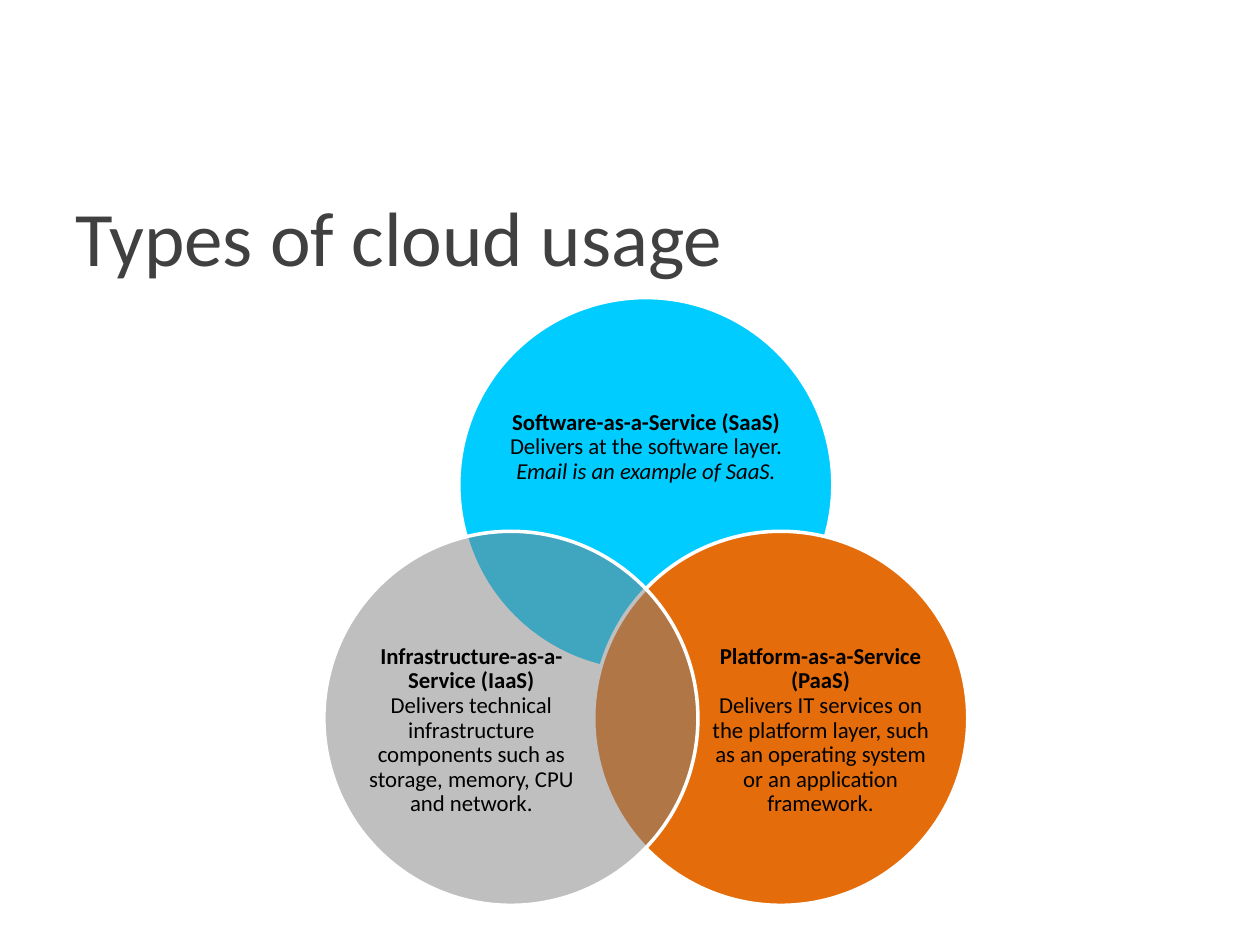
from math import sqrt

from lxml import etree
from pptx import Presentation
from pptx.dml.color import RGBColor
from pptx.enum.shapes import MSO_SHAPE
from pptx.enum.text import MSO_ANCHOR, PP_ALIGN
from pptx.oxml.ns import qn
from pptx.util import Cm, Pt

OVAL = MSO_SHAPE.OVAL
MIDDLE = MSO_ANCHOR.MIDDLE
LEFT, CENTER = PP_ALIGN.LEFT, PP_ALIGN.CENTER
BOLD, PLAIN, ITALIC = "bold", "plain", "italic"


def paint(code):
    return RGBColor.from_string(code)


class Deck:
    font = "Calibri"
    edge = "FFFFFF"

    def __init__(self, slide):
        self.slide = slide

    def circle(self, x, y, size, color, alpha=None):
        """Draw a circle around the centre x, y; alpha is a percentage."""
        shape = self.slide.shapes.add_shape(
            OVAL, Cm(x - size / 2), Cm(y - size / 2), Cm(size), Cm(size))
        shape.shadow.inherit = False
        shape.fill.solid()
        shape.fill.fore_color.rgb = paint(color)
        shape.line.color.rgb = paint(self.edge)
        shape.line.width = Pt(2)
        if alpha is not None:
            tint = shape.fill._xPr.find(qn("a:solidFill"))[0]
            etree.SubElement(tint, qn("a:alpha"), val=str(alpha * 1000))

    def text(self, x, y, w, h, lines, size, color, align=LEFT, pad=0.25, gap=1.0):
        """Centre a box on x, y; each line is a list of (words, style) runs."""
        box = self.slide.shapes.add_textbox(
            Cm(x - w / 2), Cm(y - h / 2), Cm(w), Cm(h))
        frame = box.text_frame
        frame.word_wrap = True
        frame.vertical_anchor = MIDDLE
        frame.margin_left = frame.margin_right = Cm(pad)
        frame.margin_top = frame.margin_bottom = Cm(pad / 2)
        para = frame.paragraphs[0]
        para.alignment = align
        para.line_spacing = gap
        para.font.name = self.font
        para.font.size = Pt(size)
        para.font.color.rgb = paint(color)
        for i, line in enumerate(lines):
            if i:
                para.add_line_break()
            for words, style in line:
                run = para.add_run()
                run.text = words
                if style == BOLD:
                    run.font.bold = True
                elif style == ITALIC:
                    run.font.italic = True


def main():
    prs = Presentation()
    prs.slide_width, prs.slide_height = Cm(25.4), Cm(19.05)
    deck = Deck(prs.slides.add_slide(prs.slide_layouts[6]))
    deck.text(12.7, 4.76, 22.86, 3.18, [[("Types of cloud usage", PLAIN)]],
              44, "404040")

    # The three centres form an equilateral triangle.
    mid, top, side, size = 13.02, 9.77, 5.44, 7.54
    low = top + side * sqrt(3) / 2
    wide, tall = (5.54, 3.4), (4.52, 4.14)
    # centre, colour, alpha, text offset, text size, lines
    services = [
        ((mid, top), "00CCFF", None, (0, -0.75), wide,
         [[("Software-as-a-Service (SaaS)", BOLD),
           (" Delivers at the software layer. ", PLAIN),
           ("Email is an example of SaaS.", ITALIC)]]),
        ((mid + side / 2, low), "E46C0A", None, (0.8, 0.25), tall,
         [[("Platform-as-a-Service (PaaS)", BOLD)],
          [("Delivers IT services on the platform layer, such as an "
            "operating system or an application framework.", PLAIN)]]),
        ((mid - side / 2, low), "808080", 50, (-0.8, 0.25), tall,
         [[("Infrastructure-as-a-Service (IaaS)", BOLD)],
          [("Delivers technical infrastructure components such as "
            "storage, memory, CPU and network.", PLAIN)]]),
    ]
    for (x, y), color, alpha, (dx, dy), (w, h), lines in services:
        deck.circle(x, y, size, color, alpha)
        deck.text(x + dx, y + dy, w, h, lines, 13, "000000", CENTER, 0, 0.9)

    prs.save("out.pptx")


if __name__ == "__main__":
    main()
